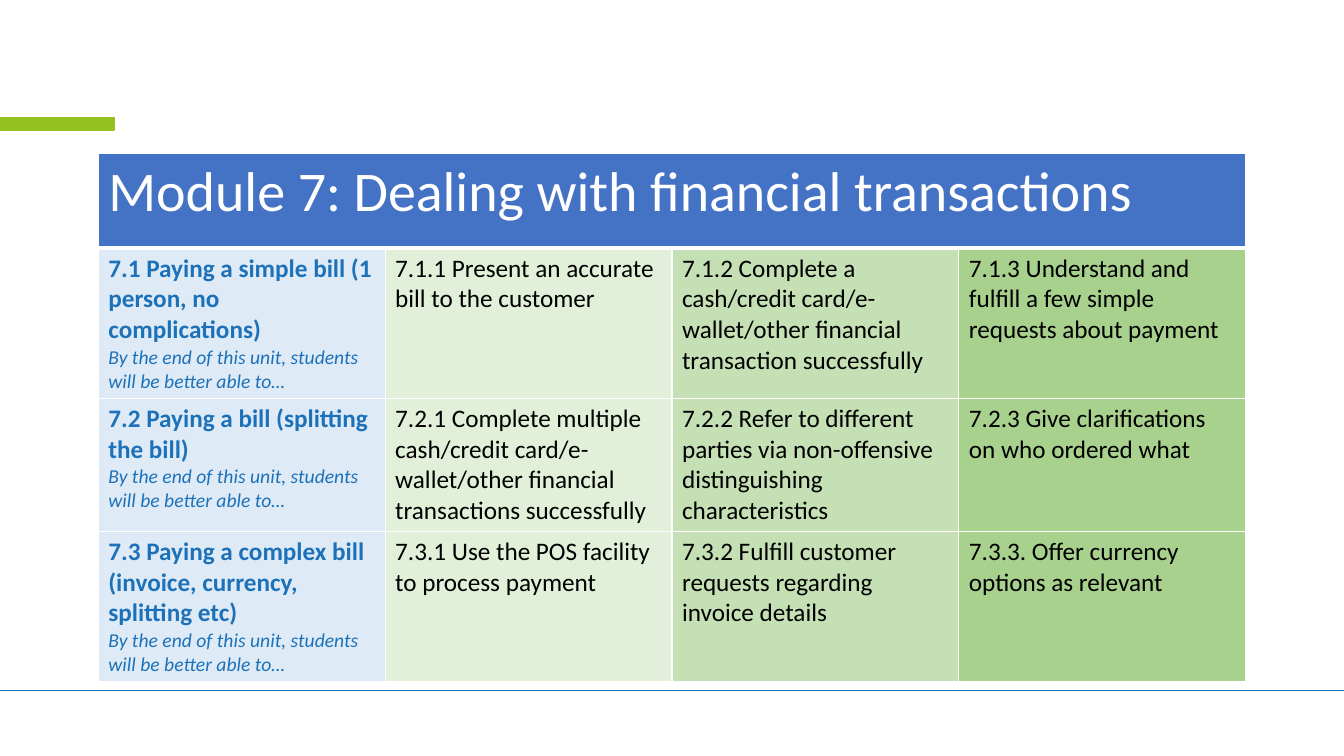
from lxml import etree
from pptx import Presentation
from pptx.dml.color import RGBColor
from pptx.enum import shapes
from pptx.oxml import ns
from pptx.util import Pt

SLIDE_W, SLIDE_H = 960, 540
FONT = "Calibri"
WHITE, BLACK, BLUE, GREEN, HEADER = "FFFFFF", "000000", "1D71B8", "95C11F", "4472C4"
COLUMN_FILLS = ["DEEBF7", "E2F0D9", "C5E0B4", "A9D18E"]
TITLE = "Module 7: Dealing with financial transactions"
LEAD_IN = "By the end of this unit, students will be better able to…"
UNITS = [
    ["7.1 Paying a simple bill (1 person, no complications)",
     "7.1.1 Present an accurate bill to the customer",
     "7.1.2 Complete a cash/credit card/e-wallet/other financial transaction successfully",
     "7.1.3 Understand and fulfill a few simple requests about payment"],
    ["7.2 Paying a bill (splitting the bill)",
     "7.2.1 Complete multiple cash/credit card/e-wallet/other financial transactions successfully",
     "7.2.2 Refer to different parties via non-offensive distinguishing characteristics",
     "7.2.3 Give clarifications on who ordered what"],
    ["7.3 Paying a complex bill (invoice, currency, splitting etc)",
     "7.3.1 Use the POS facility to process payment",
     "7.3.2 Fulfill customer requests regarding invoice details",
     "7.3.3. Offer currency options as relevant"],
]


def rgb(hex_color):
    return RGBColor.from_string(hex_color)


def add_run(p, content, size, color, bold=False, italic=False):
    r = p.add_run()
    r.text = content
    r.font.name, r.font.size = FONT, Pt(size)
    r.font.bold, r.font.italic = bold, italic
    r.font.color.rgb = rgb(color)


def style_cell(cell, fill, bottom=1):
    # Borders go before the fill in the cell properties
    tc_pr = cell._tc.get_or_add_tcPr()
    for side, width in (("L", 1), ("R", 1), ("T", 1), ("B", bottom)):
        ln = etree.SubElement(tc_pr, ns.qn("a:ln" + side), w=str(Pt(width)))
        solid = etree.SubElement(ln, ns.qn("a:solidFill"))
        etree.SubElement(solid, ns.qn("a:srgbClr"), val=WHITE)
    cell.fill.solid()
    cell.fill.fore_color.rgb = rgb(fill)


def add_decoration(s, x, y, w, h):
    # Line above the footer
    line_y = Pt(y + h - 46.8)
    line = s.shapes.add_connector(shapes.MSO_CONNECTOR.STRAIGHT,
                                  Pt(x), line_y, Pt(x + w), line_y)
    line.line.color.rgb = rgb(BLUE)
    line.line.width = Pt(1)
    etree.SubElement(line._element.spPr, ns.qn("a:effectLst"))

    # Green bar at the left edge
    bar = s.shapes.add_shape(shapes.MSO_SHAPE.RECTANGLE,
                             Pt(x), Pt(y + 84), Pt(81.5), Pt(9))
    bar.shadow.inherit = False
    bar.fill.solid()
    bar.fill.fore_color.rgb = rgb(GREEN)
    bar.line.color.rgb = rgb(GREEN)
    bar.line.width = Pt(1)


def add_module_table(s, x, y, w, header_h, row_h):
    n_rows, n_cols = len(UNITS) + 1, len(COLUMN_FILLS)
    frame = s.shapes.add_table(n_rows, n_cols, Pt(x), Pt(y), Pt(w),
                               Pt(header_h + row_h * len(UNITS)))
    table = frame.table
    table.first_row = table.horz_banding = False
    for col in table.columns:
        col.width = Pt(w / n_cols)
    for i, row in enumerate(table.rows):
        row.height = Pt(row_h if i else header_h)

    # Module title across all columns
    for col in range(n_cols):
        style_cell(table.cell(0, col), HEADER, bottom=3)
    title = table.cell(0, 0)
    title.merge(table.cell(0, n_cols - 1))
    add_run(title.text_frame.paragraphs[0], TITLE, 40, WHITE)

    # Unit name, then its outcomes
    for i, unit in enumerate(UNITS, 1):
        for j, (content, fill) in enumerate(zip(unit, COLUMN_FILLS)):
            cell = table.cell(i, j)
            style_cell(cell, fill)
            tf = cell.text_frame
            is_name = j == 0
            add_run(tf.paragraphs[0], content, 18, BLUE if is_name else BLACK, bold=is_name)
            if is_name:
                add_run(tf.add_paragraph(), LEAD_IN, 14, BLUE, italic=True)


def main():
    prs = Presentation()
    prs.slide_width, prs.slide_height = Pt(SLIDE_W), Pt(SLIDE_H)
    s = prs.slides.add_slide(prs.slide_layouts[6])
    add_decoration(s, 0, 0, SLIDE_W, SLIDE_H)
    add_module_table(s, x=70.2, y=109.6, w=819.6, header_h=67.7, row_h=83.5)
    prs.save("out.pptx")


if __name__ == "__main__":
    main()
